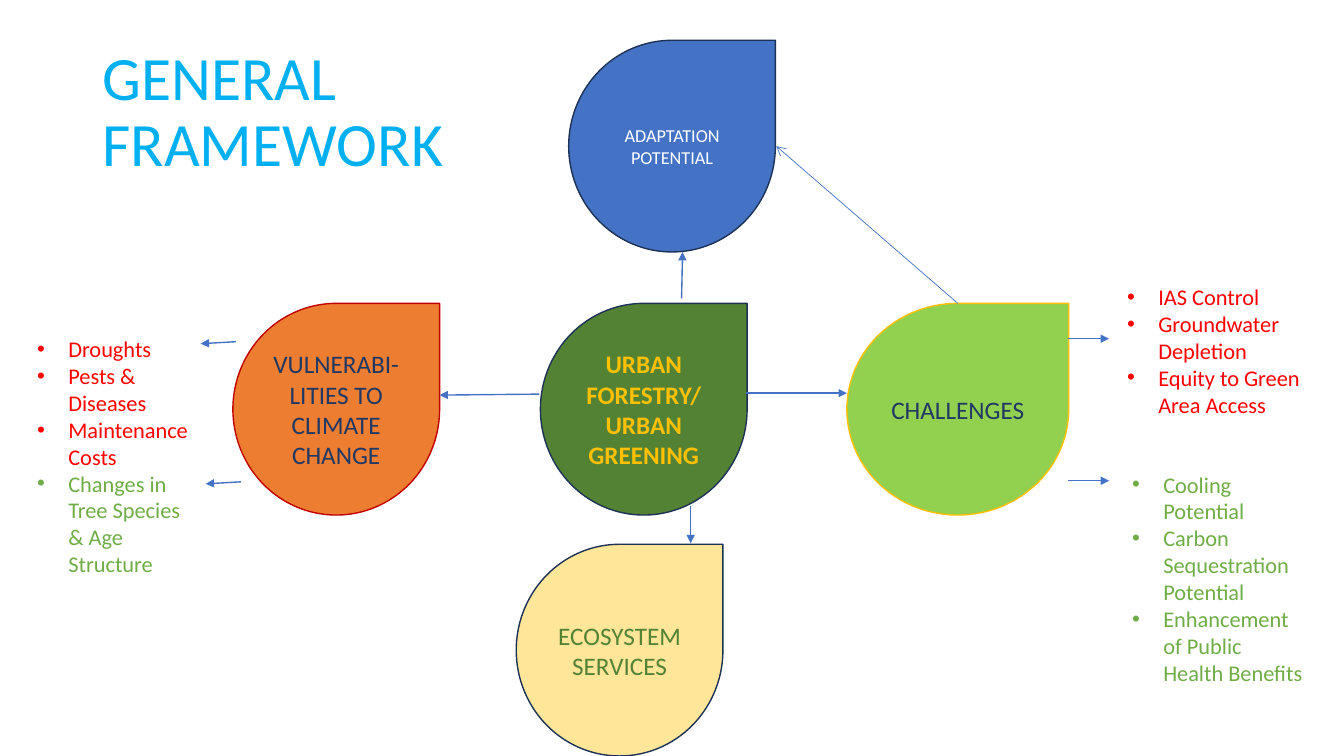
from lxml import etree
from pptx import Presentation
from pptx.dml.color import RGBColor
from pptx.enum.shapes import MSO_CONNECTOR, MSO_SHAPE
from pptx.enum.text import MSO_ANCHOR, PP_ALIGN
from pptx.oxml.ns import qn
from pptx.util import Inches, Pt

LINE, DROP = MSO_CONNECTOR.STRAIGHT, MSO_SHAPE.TEAR
MIDDLE, TOP = MSO_ANCHOR.MIDDLE, MSO_ANCHOR.TOP
CENTER, LEFT = PP_ALIGN.CENTER, PP_ALIGN.LEFT

SKY = RGBColor(0x00, 0xB0, 0xF0)
BLUE = RGBColor(0x44, 0x72, 0xC4)
NAVY = RGBColor(0x20, 0x38, 0x64)
EDGE = RGBColor(0x1E, 0x32, 0x56)
FOREST = RGBColor(0x54, 0x82, 0x35)
LIME = RGBColor(0x92, 0xD0, 0x50)
LEAF = RGBColor(0x70, 0xAD, 0x47)
GOLD = RGBColor(0xFF, 0xC0, 0x00)
CREAM = RGBColor(0xFF, 0xE6, 0x99)
ORANGE = RGBColor(0xED, 0x7D, 0x31)
BRICK = RGBColor(0xC0, 0x00, 0x00)
RED = RGBColor(0xFF, 0x00, 0x00)
WHITE = RGBColor(0xFF, 0xFF, 0xFF)

FONT = "Calibri"
WIDE, HIGH = 13.33, 7.5
TALL = 2.1                      # height of every drop
ROWS = (0.4, 3.01, HIGH - TALL)  # tops of the three rows of drops
HANG = 0.31                     # bullet indent

TITLE = "GENERAL\nFRAMEWORK"

# text, left, row, width, fill, edge, ink, size, bold
DROPS = [
    ("URBAN FORESTRY/\nURBAN GREENING", 5.36, 1, 2.05, FOREST, EDGE, GOLD, 18, True),
    ("CHALLENGES", 8.4, 1, 2.2, LIME, GOLD, NAVY, 18, False),
    ("VULNERABI-LITIES TO CLIMATE CHANGE", 2.31, 1, 2.05, ORANGE, BRICK, NAVY, 18, False),
    ("ADAPTATION POTENTIAL", 5.64, 0, 2.05, BLUE, EDGE, WHITE, 13, False),
    ("ECOSYSTEM SERVICES", 5.12, 2, 2.05, CREAM, EDGE, FOREST, 18, False),
]

# left, top, width, height, ink, items
LISTS = [
    (0.27, 3.28, 1.76, 1.45, RED,
     ["Droughts", "Pests & Diseases", "Maintenance Costs"]),
    (0.27, 4.61, 1.76, 1.18, LEAF,
     ["Changes in Tree Species & Age Structure"]),
    (11.08, 2.76, 1.99, 1.45, RED,
     ["IAS Control", "Groundwater Depletion", "Equity to Green Area Access"]),
    (11.13, 4.62, 1.93, 2.26, LEAF,
     ["Cooling Potential", "Carbon Sequestration Potential",
      "Enhancement of Public Health Benefits"]),
]

# start, end, weight, head
ARROWS = [
    ((6.76, 2.96), (6.77, 2.5), 1, "triangle"),
    ((7.4, 3.9), (8.4, 3.9), 1, "triangle"),
    ((6.85, 5.02), (6.85, 5.39), 1, "triangle"),
    ((5.35, 3.91), (4.36, 3.92), 1, "triangle"),
    ((2.34, 3.39), (1.99, 3.41), 1, "triangle"),
    ((2.39, 4.78), (2.04, 4.8), 1, "triangle"),
    ((10.59, 3.36), (11, 3.36), 1, "triangle"),
    ((10.59, 4.77), (11, 4.77), 1, "triangle"),
    ((9.5, 3.01), (7.7, 1.45), 0.5, "arrow"),
]


def write(para, text, size, ink, bold=False):
    for i, part in enumerate(text.split("\n")):
        if i:
            para.add_line_break()
        run = para.add_run()
        run.text = part
        font = run.font
        font.name, font.size, font.bold = FONT, Pt(size), bold
        font.color.rgb = ink


def set_frame(shape, anchor):
    frame = shape.text_frame
    frame.word_wrap = True
    frame.vertical_anchor = anchor
    return frame


def add_box(slide, box, anchor):
    return set_frame(slide.shapes.add_textbox(*map(Inches, box)), anchor)


def add_drop(slide, text, left, row, width, fill, edge, ink, size, bold):
    box = (left, ROWS[row], width, TALL)
    drop = slide.shapes.add_shape(DROP, *map(Inches, box))
    drop.shadow.inherit = False
    drop.fill.solid()
    drop.fill.fore_color.rgb = fill
    drop.line.color.rgb = edge
    drop.line.width = Pt(1)
    para = set_frame(drop, MIDDLE).paragraphs[0]
    para.alignment = CENTER
    write(para, text, size, ink, bold)


def add_list(slide, left, top, width, height, ink, items):
    frame = add_box(slide, (left, top, width, height), TOP)
    for i, item in enumerate(items):
        para = frame.add_paragraph() if i else frame.paragraphs[0]
        para.alignment = LEFT
        props = para._p.get_or_add_pPr()
        props.set("marL", str(Inches(HANG)))
        props.set("indent", str(-Inches(HANG)))
        etree.SubElement(props, qn("a:buFont"), typeface="Arial")
        etree.SubElement(props, qn("a:buChar"), char="•")
        write(para, item, 16, ink)


def add_arrow(slide, start, end, weight, head):
    arrow = slide.shapes.add_connector(LINE, *map(Inches, start + end))
    arrow.line.color.rgb = BLUE
    arrow.line.width = Pt(weight)
    etree.SubElement(arrow.line._get_or_add_ln(), qn("a:tailEnd"), type=head)
    etree.SubElement(arrow._element.spPr, qn("a:effectLst"))


def main():
    deck = Presentation()
    deck.slide_width, deck.slide_height = Inches(WIDE), Inches(HIGH)
    slide = deck.slides.add_slide(deck.slide_layouts[6])

    # Title
    para = add_box(slide, (0.92, ROWS[0], 3.86, 1.45), MIDDLE).paragraphs[0]
    para.line_spacing = 0.9
    write(para, TITLE, 44, SKY)

    # Drops, bullet lists and arrows
    for drop in DROPS:
        add_drop(slide, *drop)
    for entry in LISTS:
        add_list(slide, *entry)
    for arrow in ARROWS:
        add_arrow(slide, *arrow)

    deck.save("out.pptx")


if __name__ == "__main__":
    main()
